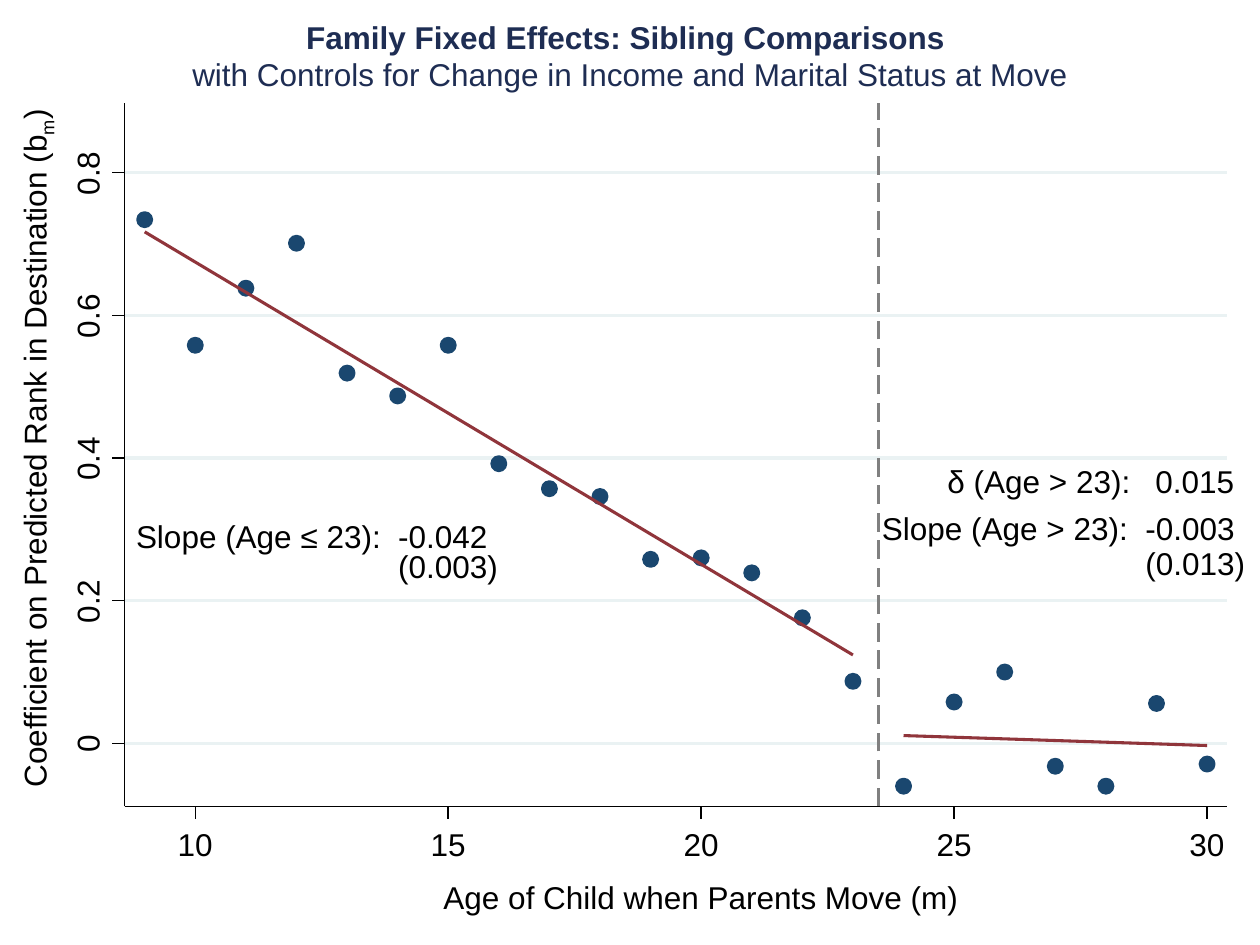
from lxml import etree
from pptx import Presentation
from pptx.dml.color import RGBColor
from pptx.enum.shapes import MSO_CONNECTOR, MSO_SHAPE
from pptx.enum.text import MSO_ANCHOR, MSO_AUTO_SIZE, PP_ALIGN
from pptx.oxml.ns import qn
from pptx.util import Inches, Pt

LEFT, CENTER = PP_ALIGN.LEFT, PP_ALIGN.CENTER
TOP = MSO_ANCHOR.TOP
NO_AUTOFIT = MSO_AUTO_SIZE.NONE
STRAIGHT = MSO_CONNECTOR.STRAIGHT
OVAL = MSO_SHAPE.OVAL

BLACK = RGBColor(0x00, 0x00, 0x00)
NAVY = RGBColor(0x1E, 0x2D, 0x53)
DOT_BLUE = RGBColor(0x1A, 0x47, 0x6F)
FIT_RED = RGBColor(0x90, 0x35, 0x3B)
CUTOFF_GRAY = RGBColor(0x80, 0x80, 0x80)
GRID = RGBColor(0xEA, 0xF2, 0xF3)
FONT = "Arial"
SIZE = Pt(18)
THICK, THIN = Pt(1.75), Pt(0.88)

TITLE = [
    "Family Fixed Effects: Sibling Comparisons ",
    "with Controls for Change in Income and Marital Status at Move",
]
SEGMENTS = [
    {
        "first_age": 9,
        "coefficients": [0.734, 0.558, 0.638, 0.701, 0.519, 0.487, 0.558, 0.392,
                         0.357, 0.346, 0.258, 0.26, 0.239, 0.176, 0.087],
        "fit": (0.717, 0.124),
    },
    {
        "first_age": 24,
        "coefficients": [-0.06, 0.058, 0.1, -0.032, -0.06, 0.056, -0.029],
        "fit": (0.011, -0.003),
    },
]
AGE_TICKS = [10, 15, 20, 25, 30]
COEFFICIENT_TICKS = ["0", "0.2", "0.4", "0.6", "0.8"]
CUTOFF_AGE = 23.5
ANNOTATIONS = [
    ("Slope (Age ≤ 23):\t-0.042", 1.08, 4.1, 2.9, 2.08),
    ("(0.003)", 3.16, 4.34, 0.85, None),
    ("Slope (Age > 23):\t-0.003", 7, 4.04, 2.9, 2.09),
    ("(0.013)", 9.09, 4.32, 0.85, None),
    ("δ (Age > 23):\t0.015", 7.52, 3.67, 2.4, 1.65),
]
AGE_TITLE = "Age of Child when Parents Move (m)"
COEFFICIENT_TITLE = ["Coefficient on Predicted Rank in Destination (b", "m", ")"]

PLOT_LEFT, PLOT_TOP, PLOT_RIGHT, PLOT_BOTTOM = 0.99, 0.82, 9.74, 6.4
AGE_10_X, AGE_30_X = 1.55, 9.58
ZERO_Y, POINT_8_Y = 5.9, 1.37
TICK = 0.1
DOT = 0.11
DASH, DASH_STEP, DASH_COUNT = 0.15, 0.22, 26


def age_x(age):
    return AGE_10_X + (age - 10) * (AGE_30_X - AGE_10_X) / 20


def coefficient_y(coefficient):
    return ZERO_Y - coefficient * (ZERO_Y - POINT_8_Y) / 0.8


def style(font, color=BLACK, bold=False):
    font.name, font.size, font.bold = FONT, SIZE, bold
    font.color.rgb = color


def add_line(shapes, start, end, color=BLACK, width=THIN):
    line = shapes.add_connector(STRAIGHT, *map(Inches, (*start, *end)))
    line.line.color.rgb, line.line.width = color, width
    etree.SubElement(line._element.spPr, qn("a:effectLst"))


def add_label(shapes, pieces, left, top, width, height=0.3, align=LEFT):
    label = shapes.add_textbox(*map(Inches, (left, top, width, height)))
    frame = label.text_frame
    frame.word_wrap = True
    frame.margin_left = frame.margin_right = frame.margin_top = frame.margin_bottom = 0
    paragraph = frame.paragraphs[0]
    paragraph.alignment = align
    for piece in pieces:
        run = paragraph.add_run()
        run.text = piece
        style(run.font)
    return label


def add_tab_stop(label, position):
    properties = label.text_frame.paragraphs[0]._p.get_or_add_pPr()
    stops = etree.SubElement(properties, qn("a:tabLst"))
    etree.SubElement(stops, qn("a:tab"), pos=str(Inches(position)), algn="l")


def add_dot(shapes, age, coefficient):
    left, top = age_x(age) - DOT / 2, coefficient_y(coefficient) - DOT / 2
    dot = shapes.add_shape(OVAL, *map(Inches, (left, top, DOT, DOT)))
    dot.shadow.inherit = False
    dot.fill.solid()
    dot.fill.fore_color.rgb = DOT_BLUE
    dot.line.color.rgb, dot.line.width = DOT_BLUE, THICK


def add_fit(shapes, ages, coefficients):
    ages = (ages[0], sum(ages) / 2, ages[1])
    coefficients = (coefficients[0], sum(coefficients) / 2, coefficients[1])
    start, *rest = [
        (Inches(age_x(age)), Inches(coefficient_y(coefficient)))
        for age, coefficient in zip(ages, coefficients)
    ]
    builder = shapes.build_freeform(*start)
    builder.add_line_segments(rest, close=False)
    fit = builder.convert_to_shape()
    fit.shadow.inherit = False
    fit.fill.background()
    fit.line.color.rgb, fit.line.width = FIT_RED, THICK


def add_background_lines(shapes):
    for tick in COEFFICIENT_TICKS:
        y = coefficient_y(float(tick))
        add_line(shapes, (PLOT_LEFT, y), (PLOT_RIGHT, y), GRID, THICK)
    x = age_x(CUTOFF_AGE)
    step = (PLOT_BOTTOM - 0.95) / (DASH_COUNT - 1)
    for index in range(DASH_COUNT):
        y = PLOT_BOTTOM - index * step
        add_line(shapes, (x, y), (x, max(y - DASH, PLOT_TOP)), CUTOFF_GRAY, THICK)


def add_segment(shapes, segment):
    first_age, coefficients = segment["first_age"], segment["coefficients"]
    for age, coefficient in enumerate(coefficients, first_age):
        add_dot(shapes, age, coefficient)
    add_fit(shapes, (first_age, first_age + len(coefficients) - 1), segment["fit"])


def add_axes(shapes):
    origin = (PLOT_LEFT, PLOT_BOTTOM)
    add_line(shapes, origin, (PLOT_LEFT, PLOT_TOP))
    for tick in COEFFICIENT_TICKS:
        y = coefficient_y(float(tick))
        add_line(shapes, (PLOT_LEFT, y), (PLOT_LEFT - TICK, y))
        width = 0.26 if len(tick) == 1 else 0.48
        label = add_label(shapes, [tick], 0.72 - width / 2, y - 0.24, width, 0.36)
        label.rotation = 270
    add_line(shapes, origin, (PLOT_RIGHT, PLOT_BOTTOM))
    for tick in AGE_TICKS:
        x = age_x(tick)
        add_line(shapes, (x, PLOT_BOTTOM), (x, PLOT_BOTTOM + TICK))
        add_label(shapes, [str(tick)], x - 0.14, 6.55, 0.41, 0.36)


def add_title(slide):
    title = slide.shapes.title
    title.left, title.top, title.width, title.height = map(Inches, (0, 0.09, 10, 0.71))
    frame = title.text_frame
    frame.auto_size, frame.vertical_anchor = NO_AUTOFIT, TOP
    frame.text = "\n".join(TITLE)
    for index, paragraph in enumerate(frame.paragraphs):
        paragraph.alignment = CENTER
        style(paragraph.runs[0].font, NAVY, index == 0)


def main():
    presentation = Presentation()
    presentation.slide_width, presentation.slide_height = Inches(10), Inches(7.5)
    slide = presentation.slides.add_slide(presentation.slide_layouts[5])
    add_title(slide)
    plot = slide.shapes.add_group_shape().shapes
    add_background_lines(plot)
    for segment in SEGMENTS:
        add_segment(plot, segment)
    add_axes(plot)
    for text, left, top, width, tab in ANNOTATIONS:
        label = add_label(slide.shapes, [text], left, top, width)
        if tab:
            add_tab_stop(label, tab)
    add_label(slide.shapes, [AGE_TITLE], 3.52, 6.97, 4.2)
    side_title = add_label(slide.shapes, COEFFICIENT_TITLE, -2.53, 3.41, 5.6, align=CENTER)
    side_title.rotation = 270
    subscript = side_title.text_frame.paragraphs[0].runs[1]
    subscript.font._element.set("baseline", "-25000")
    presentation.save("out.pptx")


if __name__ == "__main__":
    main()
